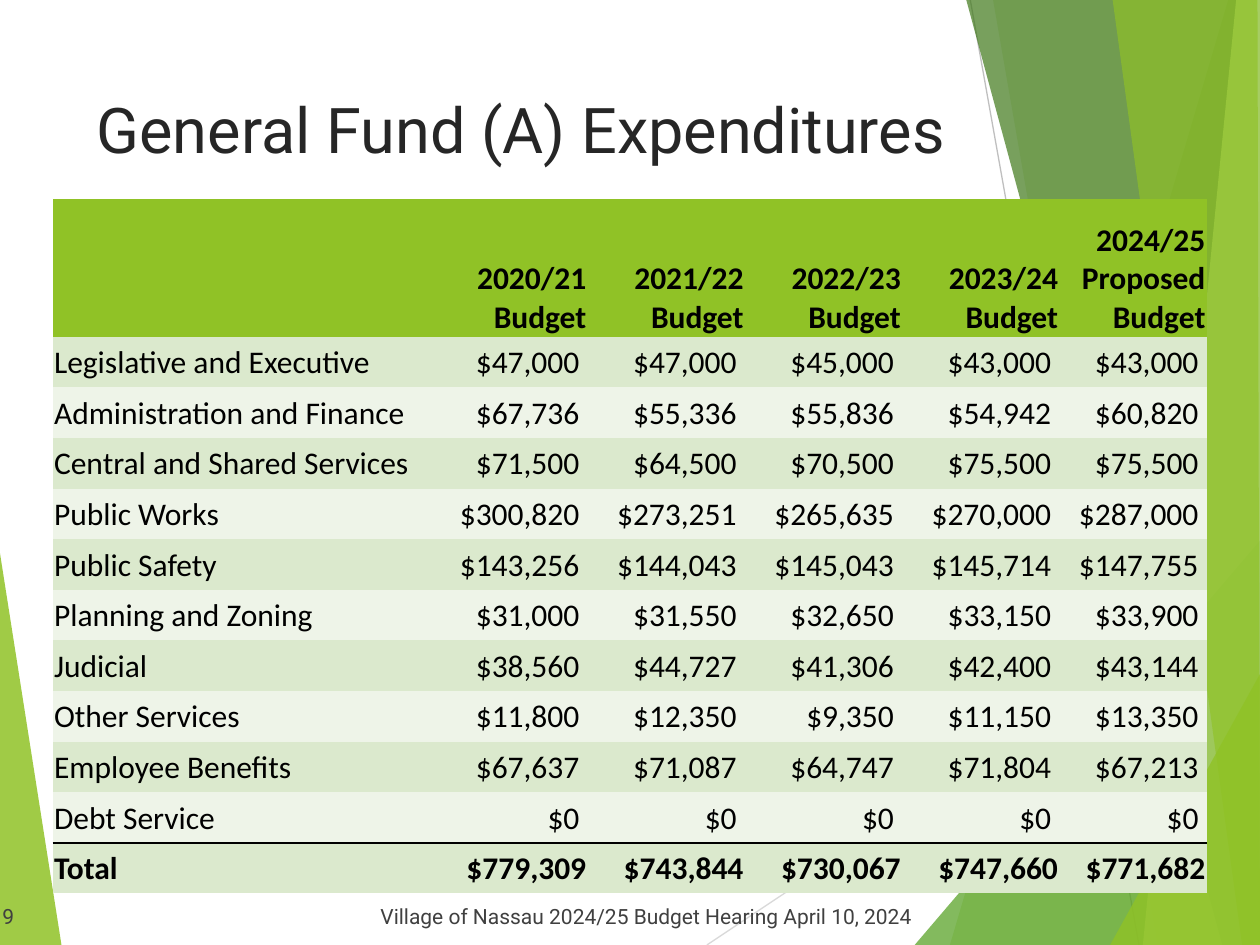
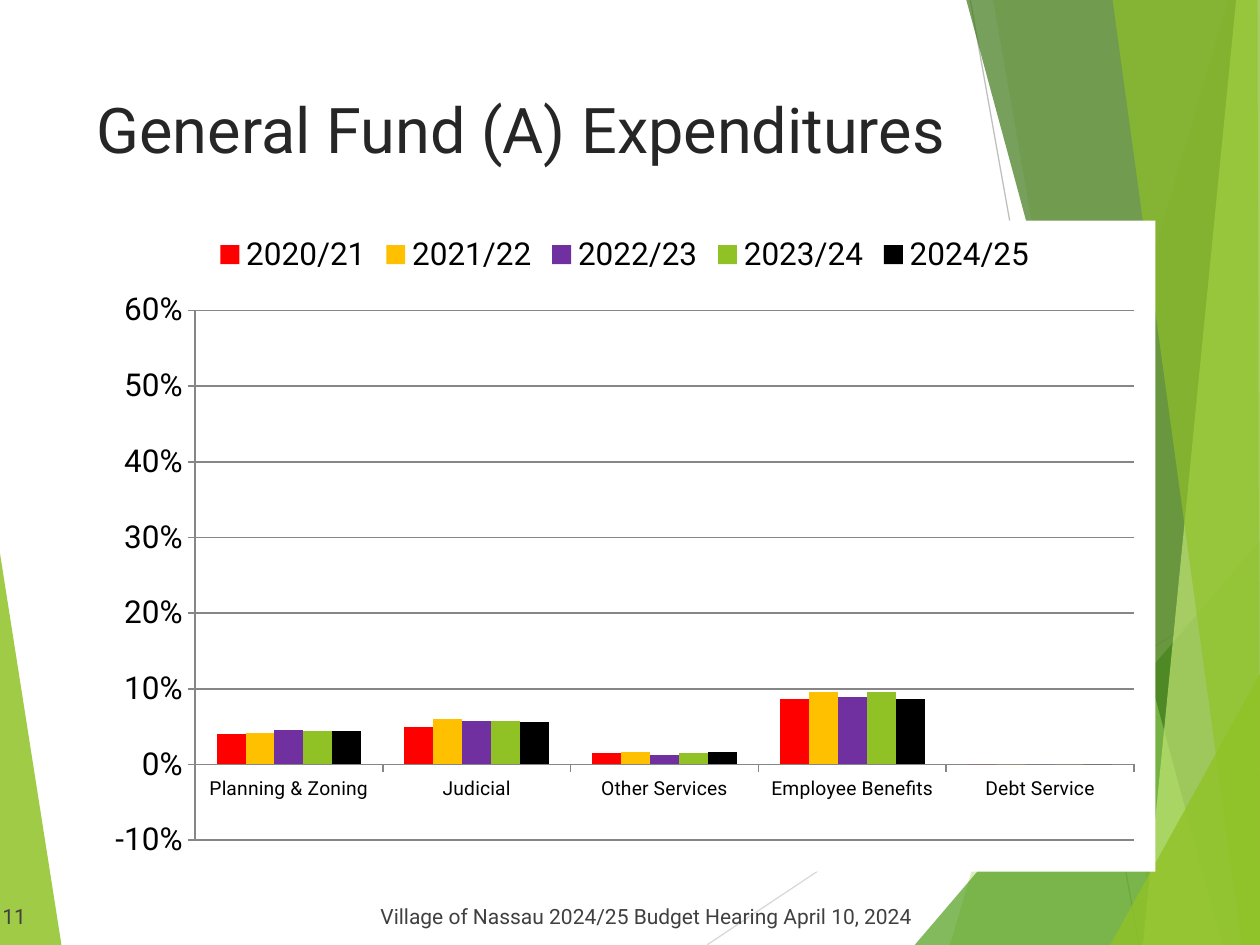
"""Build two budget hearing slides: an expenditure table and a chart of budget shares."""
from lxml.etree import SubElement
from pptx import Presentation
from pptx.chart.data import CategoryChartData
from pptx.dml.color import RGBColor
from pptx.enum.chart import XL_CHART_TYPE as ChartType, XL_LEGEND_POSITION as LegendPosition
from pptx.enum.chart import XL_TICK_MARK as TickMark
from pptx.enum.shapes import MSO_CONNECTOR as Connector
from pptx.enum.text import MSO_ANCHOR as Anchor, PP_ALIGN as Align
from pptx.oxml import parse_xml
from pptx.oxml.ns import nsdecls, qn
from pptx.util import Cm, Pt

WIDTH, HEIGHT = 25.4, 19.05
COLORS = {
    "lime": "90C226", "green": "54A021", "forest": "3F7819", "pale": "C0E474",
    "light line": "D9D9D9", "line": "BFBFBF", "grid": "868686",
    "title": "262626", "footer": "404040", "black": "000000", "white": "FFFFFF",
    "odd row": "DBE9CD", "even row": "EEF4E8",
    "red": "FF0000", "amber": "FFC000", "purple": "7030A0",
}
TITLE = "General Fund (A) Expenditures"
FOOTER = "Village of Nassau 2024/25 Budget Hearing April 10, 2024"

RIGHT_EDGE = [(WIDTH, HEIGHT), (WIDTH, 0)]
FACETS = [
    ("lime", 30, [(24.76, 0), (19.15, HEIGHT), *RIGHT_EDGE]),
    ("lime", 20, [(20.02, 0), (23.34, HEIGHT), *RIGHT_EDGE]),
    ("green", 72, [(18.44, HEIGHT), (WIDTH, 10.9), (WIDTH, HEIGHT)]),
    ("forest", 70, [(19.48, 0), (24.64, HEIGHT), *RIGHT_EDGE]),
    ("pale", 70, [(24.92, 0), (23.04, HEIGHT), *RIGHT_EDGE]),
    ("lime", 65, [(22.43, 0), (25.04, HEIGHT), (WIDTH, HEIGHT), (25.35, 0)]),
    ("lime", 80, [(22.38, HEIGHT), (WIDTH, 13.59), (WIDTH, HEIGHT)]),
]

YEARS = ["2020/21", "2021/22", "2022/23", "2023/24", "2024/25"]
HEADINGS = ["", "2020/21 Budget", "2021/22\nBudget", "2022/23\nBudget", "2023/24\nBudget",
            "2024/25 Proposed\nBudget"]
EXPENDITURES = {
    "Legislative and Executive": [47000, 47000, 45000, 43000, 43000],
    "Administration and Finance": [67736, 55336, 55836, 54942, 60820],
    "Central and Shared Services": [71500, 64500, 70500, 75500, 75500],
    "Public Works": [300820, 273251, 265635, 270000, 287000],
    "Public Safety": [143256, 144043, 145043, 145714, 147755],
    "Planning and Zoning": [31000, 31550, 32650, 33150, 33900],
    "Judicial": [38560, 44727, 41306, 42400, 43144],
    "Other Services": [11800, 12350, 9350, 11150, 13350],
    "Employee Benefits": [67637, 71087, 64747, 71804, 67213],
    "Debt Service": [0, 0, 0, 0, 0],
}
TOTALS = [779309, 743844, 730067, 747660, 771682]
CHARTED = ["Planning and Zoning", "Judicial", "Other Services", "Employee Benefits",
           "Debt Service"]


def rgb(name):
    """Return a named colour."""
    return RGBColor.from_string(COLORS[name])


class Deck:
    """Hold the presentation style and the current slide."""

    def __init__(self):
        """Open an empty presentation of the right size."""
        self.presentation = Presentation()
        self.presentation.slide_width = Cm(WIDTH)
        self.presentation.slide_height = Cm(HEIGHT)
        self.slide = None

    def add_slide(self, number):
        """Start a slide with backdrop, footer and title."""
        self.slide = self.presentation.slides.add_slide(self.presentation.slide_layouts[6])
        self.facet("lime", 85, [(0, 11.15), (1.24, HEIGHT), (0, HEIGHT)])
        self.line((14.25, HEIGHT), (WIDTH, 11.62), "light line")
        self.line((19.56, 0), (22.96, HEIGHT), "line")
        for facet in FACETS:
            self.facet(*facet)
        self.text((-0.2, 17.83, 19.69, 1.02), f"{number}\t{FOOTER}", 12, "footer",
                  Anchor.BOTTOM, tab=7.62)
        self.text((1.7, 1.7, 18.21, 3.66), TITLE, 36, "title")

    def facet(self, color, opacity, points):
        """Draw a translucent polygon."""
        start, *rest = [(Cm(x), Cm(y)) for x, y in points]
        builder = self.slide.shapes.build_freeform(*start)
        builder.add_line_segments(rest)
        shape = builder.convert_to_shape()
        shape.shadow.inherit = False
        shape.line.fill.background()
        shape.fill.solid()
        shape.fill.fore_color.rgb = rgb(color)
        color_element = next(shape.fill._xPr.iter(qn("a:srgbClr")))
        SubElement(color_element, qn("a:alpha"), val=str(opacity * 1000))

    def line(self, start, end, color):
        """Draw a thin straight line."""
        connector = self.slide.shapes.add_connector(
            Connector.STRAIGHT, *[Cm(value) for value in (*start, *end)])
        connector.line.color.rgb = rgb(color)
        connector.line.width = Pt(0.75)
        SubElement(connector._element.spPr, qn("a:effectLst"))

    def style(self, font, size, color="black", name="Roboto", bold=False):
        """Apply the text style to a font."""
        font.name, font.size, font.bold = name, Pt(size), bold
        font.color.rgb = rgb(color)

    def text(self, box, text, size, color, anchor=Anchor.TOP, tab=None):
        """Add a one-paragraph text box."""
        shape = self.slide.shapes.add_textbox(*[Cm(value) for value in box])
        frame = shape.text_frame
        frame.word_wrap = True
        frame.vertical_anchor = anchor
        frame.text = text
        paragraph = frame.paragraphs[0]
        if tab:
            tabs = SubElement(paragraph._p.get_or_add_pPr(), qn("a:tabLst"))
            SubElement(tabs, qn("a:tab"), pos=str(Cm(tab)), algn="l")
        self.style(paragraph.font, size, color)

    def cell(self, cell, text, fill, bold, anchor, right, margin):
        """Fill and format one table cell."""
        cell.fill.solid()
        cell.fill.fore_color.rgb = rgb(fill)
        cell.vertical_anchor = anchor
        cell.margin_left = cell.margin_top = Cm(0.03)
        cell.margin_right, cell.margin_bottom = Cm(margin), 0
        cell.text = text
        for paragraph in cell.text_frame.paragraphs:
            paragraph.alignment = Align.RIGHT if right else Align.LEFT
            self.style(paragraph.font, 18, name="Calibri", bold=bold)

    def border(self, cell, side):
        """Draw a black border on one side of a cell."""
        cell._tc.get_or_add_tcPr().insert(0, parse_xml(
            f'<a:{side} {nsdecls("a")} w="12700"><a:solidFill>'
            f'<a:srgbClr val="{COLORS["black"]}"/></a:solidFill></a:{side}>'))

    def table(self, left, top, widths, heights, rows):
        """Add a banded table with a heading row and a total row."""
        frame = self.slide.shapes.add_table(
            len(rows), len(widths), Cm(left), Cm(top), Cm(sum(widths)), Cm(sum(heights)))
        table = frame.table
        table._tbl.tblPr.find(qn("a:tableStyleId")).text = "{2D5ABB26-0587-4C30-8999-92F81FD0307C}"
        for column, width in zip(table.columns, widths):
            column.width = Cm(width)
        last = len(rows) - 1
        for index, (row, height) in enumerate(zip(rows, heights)):
            table.rows[index].height = Cm(height)
            heading, strong = index == 0, index in (0, last)
            fill = "lime" if heading else "odd row" if index % 2 else "even row"
            anchor = Anchor.BOTTOM if heading else Anchor.MIDDLE
            for position, text in enumerate(row):
                self.cell(table.cell(index, position), text, fill, strong, anchor,
                          position > 0, 0.03 if strong else 0.17)
        for position in range(len(widths)):
            self.border(table.cell(last - 1, position), "lnB")
            self.border(table.cell(last, position), "lnT")

    def chart(self, box, categories, series, colors):
        """Add a clustered column chart of percentages."""
        data = CategoryChartData(number_format="0%")
        data.categories = categories
        for name, values in series.items():
            data.add_series(name, values)
        chart = self.slide.shapes.add_chart(
            ChartType.COLUMN_CLUSTERED, *[Cm(value) for value in box], data).chart
        self.style(chart.font, 18)
        chart.has_title = False
        chart.has_legend = True
        chart.legend.position = LegendPosition.TOP
        chart.legend.include_in_layout = False
        plot = chart.plots[0]
        plot.gap_width, plot.overlap, plot.vary_by_categories = 150, 0, False
        for bars, color in zip(plot.series, colors):
            bars.format.fill.solid()
            bars.format.fill.fore_color.rgb = rgb(color)
            bars.invert_if_negative = False
        value_axis, category_axis = chart.value_axis, chart.category_axis
        value_axis.minimum_scale, value_axis.maximum_scale = -0.1, 0.6
        value_axis.major_unit = 0.1
        value_axis.has_major_gridlines = True
        value_axis.tick_labels.number_format = "0%"
        value_axis.tick_labels.number_format_is_linked = False
        self.style(category_axis.tick_labels.font, 11)
        for axis in (value_axis, category_axis):
            axis.major_tick_mark = TickMark.OUTSIDE
        for part in (value_axis, category_axis, value_axis.major_gridlines):
            part.format.line.color.rgb = rgb("grid")
            part.format.line.width = Pt(1)
        self.chart_area(chart, {"x": 0.095, "y": 0.138, "w": 0.885, "h": 0.814})

    def chart_area(self, chart, layout):
        """Give the chart a white ground and place its plot area."""
        chart_element = chart._chartSpace.chart
        chart_element.addnext(parse_xml(
            f'<c:spPr {nsdecls("c", "a")}><a:solidFill><a:srgbClr val="{COLORS["white"]}"/>'
            '</a:solidFill><a:ln><a:noFill/></a:ln></c:spPr>'))
        plot_area = chart_element.plotArea
        for old in plot_area.findall(qn("c:layout")):
            plot_area.remove(old)
        modes = '<c:layoutTarget val="inner"/><c:xMode val="edge"/><c:yMode val="edge"/>'
        sizes = "".join(f'<c:{key} val="{value}"/>' for key, value in layout.items())
        plot_area.insert(0, parse_xml(
            f'<c:layout {nsdecls("c")}><c:manualLayout>{modes}{sizes}</c:manualLayout></c:layout>'))


def main():
    """Build both slides and save them."""
    deck = Deck()

    deck.add_slide(9)
    amounts = {**EXPENDITURES, "Total": TOTALS}
    rows = [HEADINGS] + [[name, *(f"${value:,}" for value in values)]
                         for name, values in amounts.items()]
    deck.table(1.06, 4.02, [7.62] + [3.17] * 4 + [2.97], [2.77] + [1.02] * 11, rows)

    deck.add_slide(11)
    shares = {year: [round(EXPENDITURES[name][index] / TOTALS[index], 3) for name in CHARTED]
              for index, year in enumerate(YEARS)}
    categories = [name.replace(" and ", " & ") for name in CHARTED]
    deck.chart((1.9, 4.45, 21.39, 13.12), categories, shares,
               ["red", "amber", "purple", "lime", "black"])

    deck.presentation.save("out.pptx")


if __name__ == "__main__":
    main()
